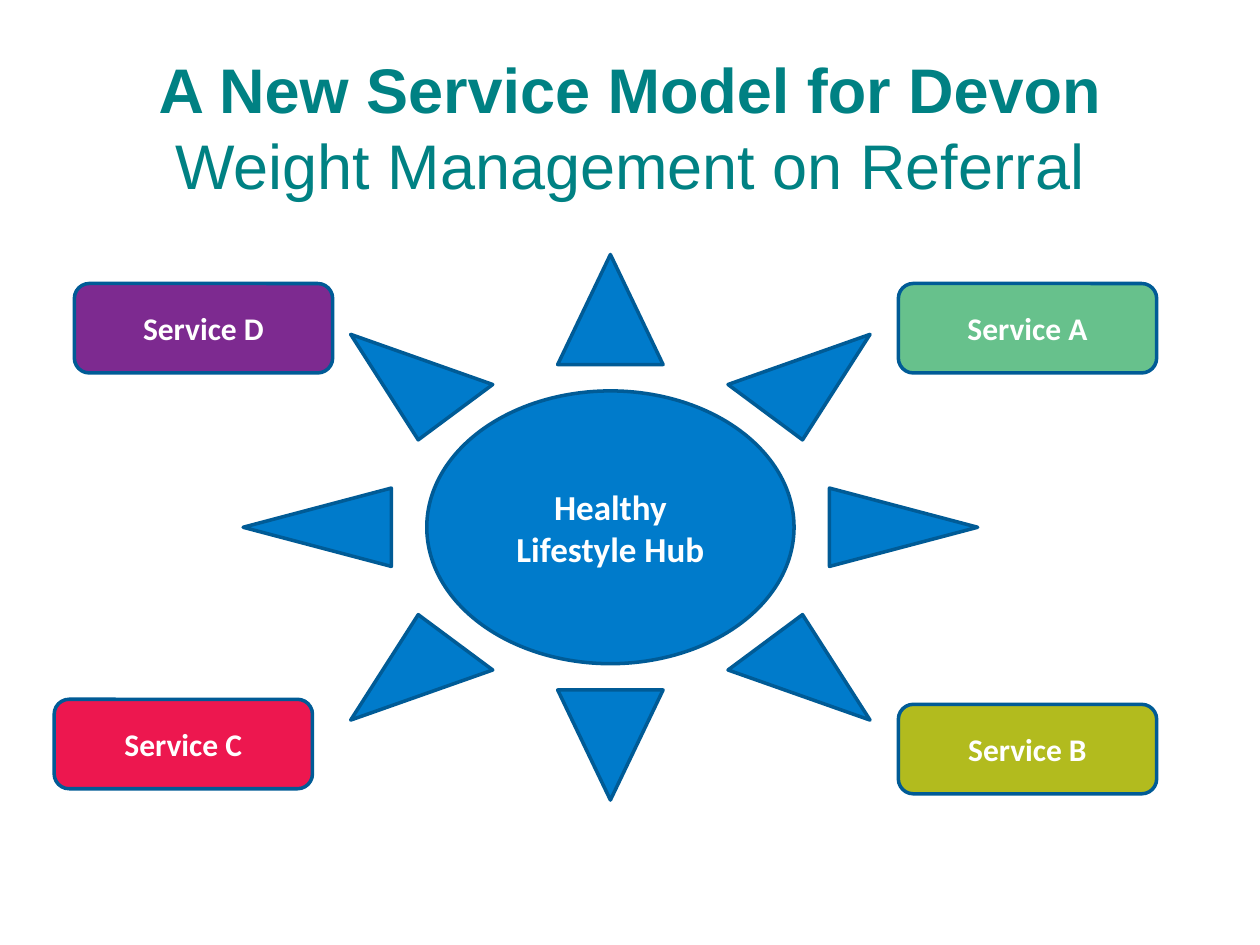
from pptx import Presentation
from pptx.dml.color import RGBColor
from pptx.enum.shapes import MSO_SHAPE as Shape
from pptx.enum.text import MSO_ANCHOR as Anchor, MSO_AUTO_SIZE as AutoSize, PP_ALIGN as Align
from pptx.util import Inches, Pt

TEAL = RGBColor(0x00, 0x81, 0x83)
BLUE = RGBColor(0x00, 0x7B, 0xCB)
DARK_BLUE = RGBColor(0x00, 0x5B, 0x96)
GREEN = RGBColor(0x67, 0xC1, 0x8C)
PURPLE = RGBColor(0x7D, 0x2A, 0x90)
LIME = RGBColor(0xB2, 0xBB, 0x1E)
RED = RGBColor(0xED, 0x17, 0x4F)
WHITE = RGBColor(0xFF, 0xFF, 0xFF)

SERVICE_WIDTH, SERVICE_HEIGHT = 2.05, 0.71
SERVICES = [
    ("Service A", 7.13, 2.25, GREEN),
    ("Service D", 0.59, 2.25, PURPLE),
    ("Service B", 7.13, 5.59, LIME),
    ("Service C", 0.43, 5.55, RED),
]


def format_text(frame, name, size, color):
    """Centre the text of a frame and set its font."""
    frame.word_wrap = True
    frame.vertical_anchor = Anchor.MIDDLE
    for para in frame.paragraphs:
        para.alignment = Align.CENTER
        for span in para.runs:
            span.font.name = name
            span.font.size = Pt(size)
            span.font.bold = True
            span.font.color.rgb = color


def place_title(page, left, top, width, height):
    title = page.shapes.title
    title.left, title.top = Inches(left), Inches(top)
    title.width, title.height = Inches(width), Inches(height)
    frame = title.text_frame
    frame.auto_size = AutoSize.NONE
    frame.text = "A New Service Model for Devon\vWeight Management on Referral"
    format_text(frame, "Arial", 36, TEAL)
    frame.paragraphs[0].runs[1].font.bold = False


def add_label(page, kind, text, left, top, width, height, fill, size):
    """Add an outlined preset shape with a white label."""
    shape = page.shapes.add_shape(
        kind, Inches(left), Inches(top), Inches(width), Inches(height))
    shape.shadow.inherit = False
    shape.fill.solid()
    shape.fill.fore_color.rgb = fill
    shape.line.color.rgb = DARK_BLUE
    shape.line.width = Pt(2)
    shape.text_frame.text = text
    format_text(shape.text_frame, "Calibri", size, WHITE)


def main():
    deck = Presentation()
    deck.slide_width, deck.slide_height = Inches(10), Inches(7.5)
    page = deck.slides.add_slide(deck.slide_layouts[5])

    place_title(page, 0.5, 0.3, 9, 1.4)

    # Central hub
    add_label(page, Shape.SUN, "Healthy Lifestyle Hub",
              1.93, 2.02, 5.83, 4.33, BLUE, 20)

    # Services around the hub
    for text, left, top, fill in SERVICES:
        add_label(page, Shape.ROUNDED_RECTANGLE, text, left, top,
                  SERVICE_WIDTH, SERVICE_HEIGHT, fill, 18)

    deck.save("out.pptx")


if __name__ == "__main__":
    main()
